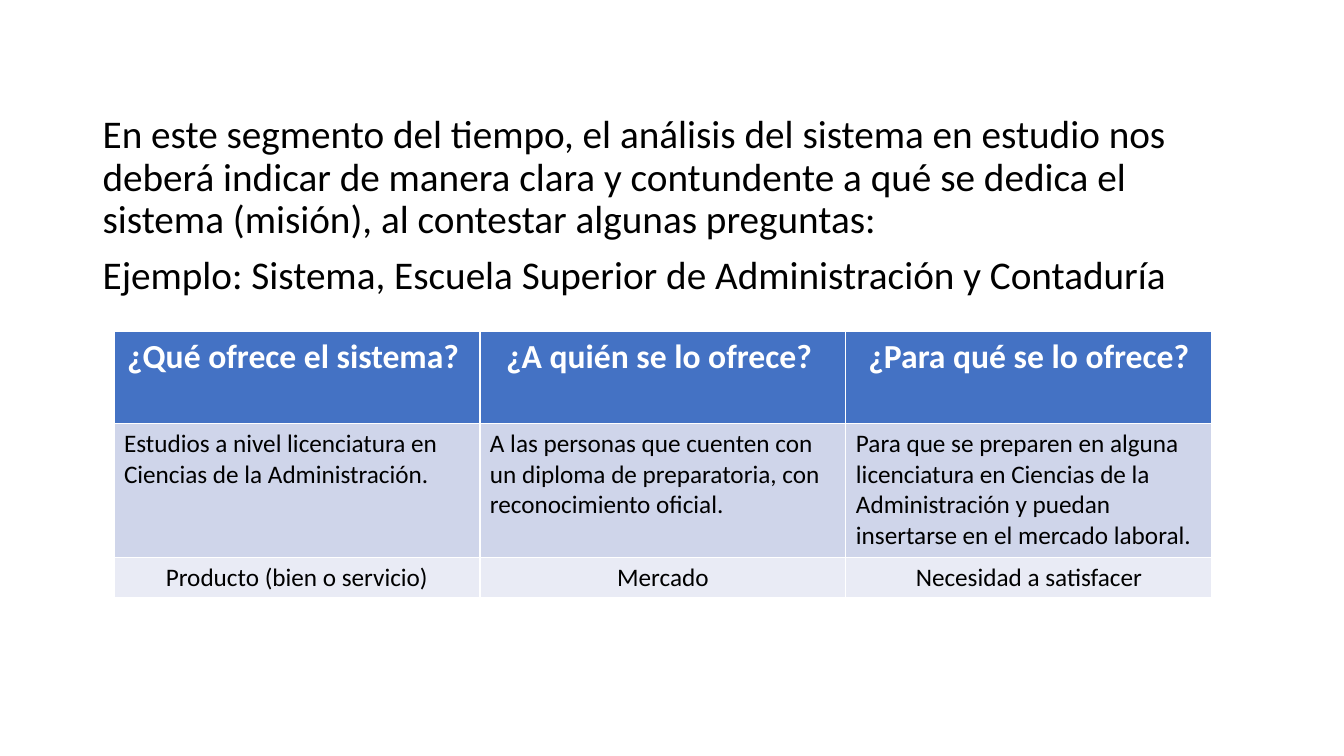
from pptx import Presentation
from pptx.dml.color import RGBColor
from pptx.enum import text
from pptx.util import Inches, Pt

FONT = "Calibri"
BLACK, WHITE = "000000", "FFFFFF"
CENTER, LEFT = text.PP_ALIGN.CENTER, text.PP_ALIGN.LEFT

INTRODUCTION = [
    "En este segmento del tiempo, el análisis del sistema en estudio nos deberá "
    "indicar de manera clara y contundente a qué se dedica el sistema (misión), "
    "al contestar algunas preguntas:",
    "Ejemplo: Sistema, Escuela Superior de Administración y Contaduría",
]

QUESTIONS = ["¿Qué ofrece el sistema? ", "¿A quién se lo ofrece? ", "¿Para qué se lo ofrece?"]
ANSWERS = [
    "Estudios a nivel licenciatura en Ciencias de la Administración.",
    "A las personas que cuenten con un diploma de preparatoria, con reconocimiento oficial.",
    "Para que se preparen en alguna licenciatura en Ciencias de la Administración "
    "y puedan insertarse en el mercado laboral.",
]
CONCEPTS = ["Producto (bien o servicio)", "Mercado", "Necesidad a satisfacer"]

# Each row: texts, height in inches, fill, text format
ROWS = [
    (QUESTIONS, 0.91, "4472C4", dict(size=24, color=WHITE, bold=True, align=CENTER)),
    (ANSWERS, 1.33, "CFD5EA", dict(size=18)),
    (CONCEPTS, 0.4, "E9EBF5", dict(size=18, align=CENTER)),
]


def rgb(color):
    return RGBColor.from_string(color)


def write(paragraph, content, size, color=BLACK, bold=False, align=LEFT,
          line_spacing=None, space_before=None):
    paragraph.alignment = align
    paragraph.line_spacing = line_spacing
    if space_before is not None:
        paragraph.space_before = Pt(space_before)
    run = paragraph.add_run()
    run.text = content
    run.font.name = FONT
    run.font.size = Pt(size)
    run.font.bold = bold
    run.font.color.rgb = rgb(color)


def add_text(slide, left, top, width, height, contents, **style):
    frame = slide.shapes.add_textbox(
        Inches(left), Inches(top), Inches(width), Inches(height)).text_frame
    frame.word_wrap = True
    for index, content in enumerate(contents):
        paragraph = frame.add_paragraph() if index else frame.paragraphs[0]
        write(paragraph, content, **style)


def add_table(slide, left, top, column_width, rows):
    columns = len(rows[0][0])
    height = sum(row[1] for row in rows)
    table = slide.shapes.add_table(
        len(rows), columns, Inches(left), Inches(top),
        Inches(column_width * columns), Inches(height)).table
    for column in table.columns:
        column.width = Inches(column_width)
    for row, (contents, row_height, fill, style) in zip(table.rows, rows):
        row.height = Inches(row_height)
        for cell, content in zip(row.cells, contents):
            cell.fill.solid()
            cell.fill.fore_color.rgb = rgb(fill)
            write(cell.text_frame.paragraphs[0], content, **style)


def main():
    presentation = Presentation()
    presentation.slide_width = Inches(13.33)
    presentation.slide_height = Inches(7.5)
    slide = presentation.slides.add_slide(presentation.slide_layouts[6])

    # Introduction
    add_text(slide, 0.92, 1.09, 11.5, 5.67, INTRODUCTION,
             size=28, line_spacing=0.9, space_before=10)

    # Questions that define the mission
    add_table(slide, 1.13, 3.29, 3.63, ROWS)

    presentation.save("out.pptx")


if __name__ == "__main__":
    main()
